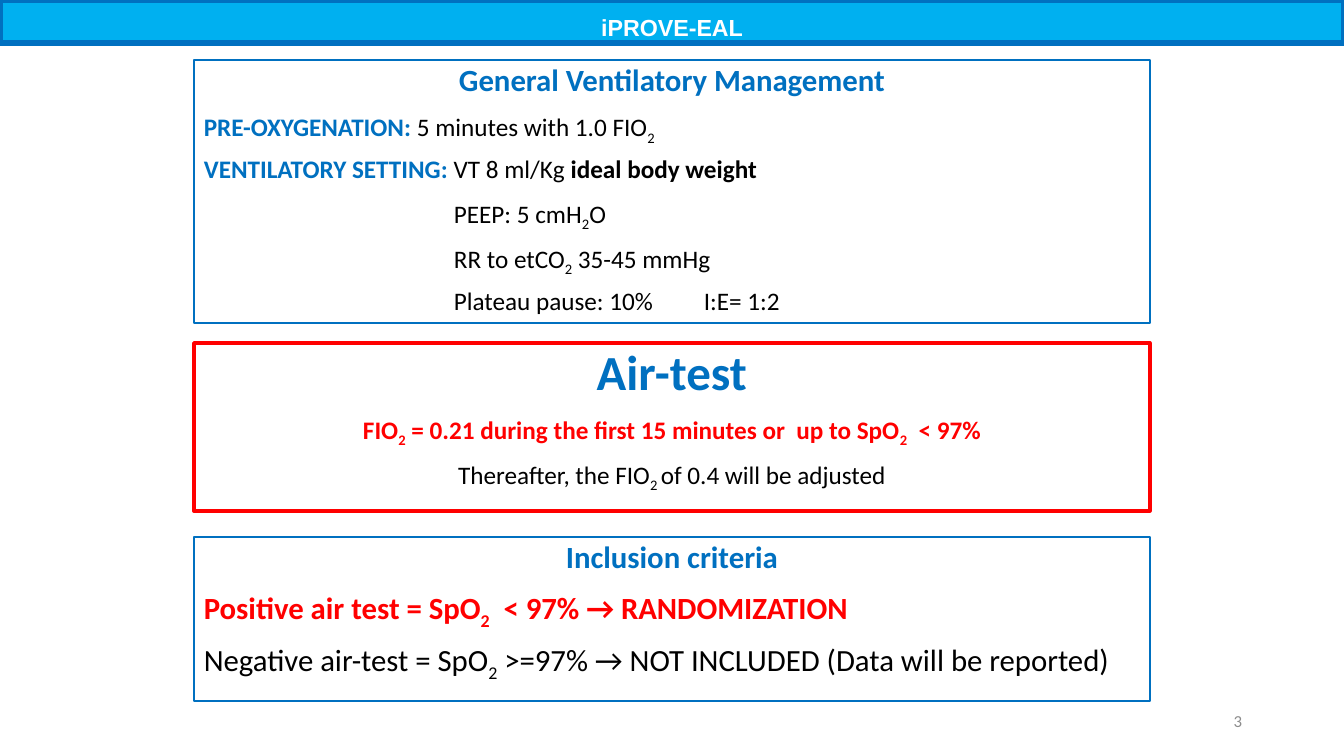
from lxml import etree
from pptx import Presentation
from pptx.dml.color import RGBColor
from pptx.enum.shapes import MSO_SHAPE
from pptx.enum.text import MSO_ANCHOR, MSO_AUTO_SIZE, PP_ALIGN
from pptx.oxml.ns import qn
from pptx.util import Pt

RECT = MSO_SHAPE.RECTANGLE
TOP, MIDDLE = MSO_ANCHOR.TOP, MSO_ANCHOR.MIDDLE
FIXED = MSO_AUTO_SIZE.NONE
CENTER, RIGHT, JUST = PP_ALIGN.CENTER, PP_ALIGN.RIGHT, PP_ALIGN.JUSTIFY

BLUE = RGBColor(0x00, 0x70, 0xC0)
SKY = RGBColor(0x00, 0xB0, 0xF0)
RED = RGBColor(0xFF, 0x00, 0x00)
BLACK = RGBColor(0x00, 0x00, 0x00)
WHITE = RGBColor(0xFF, 0xFF, 0xFF)
GRAY = RGBColor(0x8C, 0x8C, 0x8C)

TITLE = "iPROVE-EAL"
NUMBER = "3"

HEAD = (BLUE, True)
ALERT = (RED, True)
STRONG = (BLACK, True)
PLAIN = (BLACK, False)

# Underscores enclose subscripts.
PANELS = [
    (60, 263, BLUE, 1.5, [
        (22, CENTER, [("General Ventilatory Management", HEAD)]),
        (18, JUST, [("PRE-OXYGENATION: ", HEAD),
                    ("5 minutes with 1.0 FIO_2_", PLAIN)]),
        (18, JUST, [("VENTILATORY SETTING: ", HEAD),
                    ("VT 8 ml/Kg ", PLAIN),
                    ("ideal body weight", STRONG)]),
        (18, JUST, [("\tPEEP: 5 cmH_2_O", PLAIN)]),
        (18, JUST, [("\tRR to etCO_2_ 35-45 mmHg", PLAIN)]),
        (18, JUST, [("\tPlateau pause: 10%\tI:E= 1:2", PLAIN)]),
    ]),
    (343, 168, RED, 2.5, [
        (35, CENTER, [("Air-test", HEAD)]),
        (18, CENTER, [("FIO_2_ = 0.21 during the first 15 minutes or  "
                       "up to SpO_2_  < 97%", ALERT)]),
        (18, CENTER, [("Thereafter, the FIO_2 _of 0.4 will be adjusted",
                       PLAIN)]),
    ]),
    (537, 164, BLUE, 1.5, [
        (22, CENTER, [("Inclusion criteria", HEAD)]),
        (22, JUST, [("Positive air test = SpO_2_  < 97% → RANDOMIZATION",
                     ALERT)]),
        (22, JUST, [("Negative air-test = SpO_2_ >=97% → NOT INCLUDED "
                     "(Data will be reported)", PLAIN)]),
    ]),
]
LEFT, WIDTH = 194, 956
TABS = [250, 500]
SCALE = 12192000 / 1344


def px(n):
    return round(n * SCALE)


def place(shape, *box):
    shape.left, shape.top, shape.width, shape.height = map(px, box)


def style(font, name, size, color, bold):
    font.name, font.size, font.bold = name, Pt(size), bold
    font.color.rgb = color


def border(shape, color, width):
    shape.line.color.rgb = color
    shape.line.width = Pt(width)


def add_runs(para, text, look):
    for i, part in enumerate(text.split("_")):
        if part:
            run = para.add_run()
            run.text = part
            run.font.color.rgb, run.font.bold = look
            if i % 2:
                run.font._element.set("baseline", "-25000")


def add_tabs(para):
    props = para._p.get_or_add_pPr()
    stops = etree.Element(qn("a:tabLst"))
    for stop in TABS:
        etree.SubElement(stops, qn("a:tab"), pos=str(px(stop)), algn="l")
    fonts = props.find(qn("a:defRPr"))
    if fonts is None:
        props.append(stops)
    else:
        fonts.addprevious(stops)


def add_panel(slide, top, height, color, width, lines):
    panel = slide.shapes.add_shape(RECT, 0, 0, 0, 0)
    place(panel, LEFT, top, WIDTH, height)
    panel.shadow.inherit = False
    panel.fill.background()
    border(panel, color, width)
    frame = panel.text_frame
    frame.word_wrap = True
    frame.vertical_anchor = TOP
    for i, (size, align, runs) in enumerate(lines):
        para = frame.add_paragraph() if i else frame.paragraphs[0]
        para.alignment = align
        para.line_spacing = 0.9
        para.space_before = Pt(10)
        para.font.name, para.font.size = "Calibri", Pt(size)
        for text, look in runs:
            add_runs(para, text, look)
        if runs[0][0].startswith("\t"):
            add_tabs(para)


def main():
    deck = Presentation()
    deck.slide_width, deck.slide_height = px(1344), px(756)
    slide = deck.slides.add_slide(deck.slide_layouts[5])

    title = slide.shapes.title
    place(title, 0, 0, 1344, 43)
    title.fill.solid()
    title.fill.fore_color.rgb = SKY
    border(title, BLUE, 4.5)
    frame = title.text_frame
    frame.text = TITLE
    frame.auto_size = FIXED
    frame.vertical_anchor = MIDDLE
    frame.margin_top, frame.margin_bottom = px(12), 0
    frame.paragraphs[0].alignment = CENTER
    style(frame.paragraphs[0].font, "Arial", 16.6, WHITE, True)

    for panel in PANELS:
        add_panel(slide, *panel)

    number = slide.shapes.add_textbox(0, 0, 0, 0)
    place(number, 950, 701, 302, 40)
    frame = number.text_frame
    frame.text = NUMBER
    frame.word_wrap = True
    frame.vertical_anchor = MIDDLE
    frame.paragraphs[0].alignment = RIGHT
    style(frame.paragraphs[0].font, "Calibri", 12, GRAY, False)

    deck.save("out.pptx")


if __name__ == "__main__":
    main()
